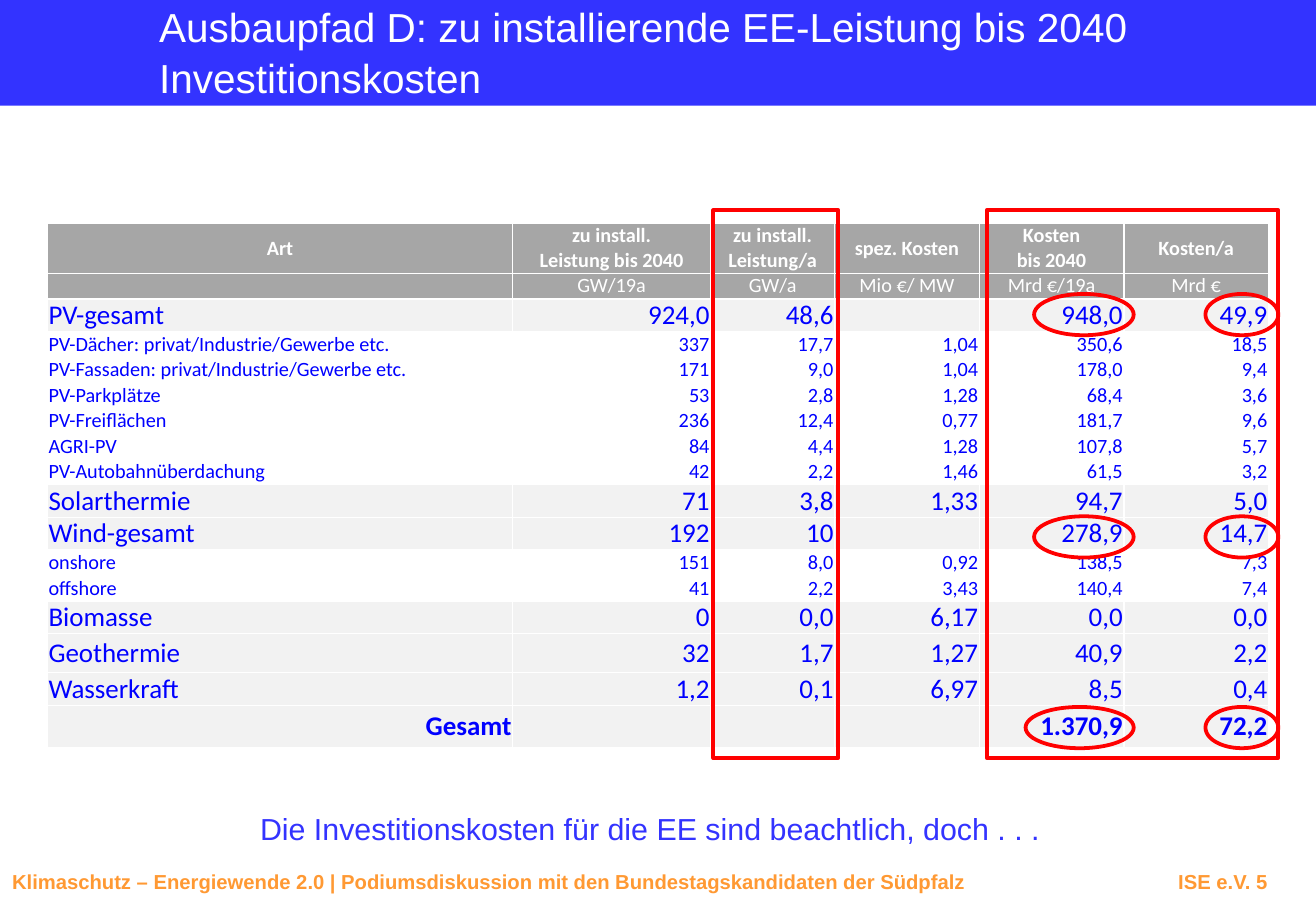
from dataclasses import dataclass

from lxml.etree import SubElement
from pptx import Presentation
from pptx.dml.color import RGBColor
from pptx.enum.shapes import MSO_SHAPE as Shape
from pptx.enum.text import MSO_ANCHOR as Anchor, PP_ALIGN as Align
from pptx.oxml.ns import qn
from pptx.util import Inches, Pt

COLORS = {
    "banner": "3333FF", "white": "FFFFFF", "footer": "FF9933", "header": "A6A6A6",
    "group": "F2F2F2", "figures": "0000FF", "mark": "FF0000",
}
WIDTH, HEIGHT = Inches(10.83), Inches(7.5)


def across(percent: float) -> int:
    """Length as a percentage of the slide width."""
    return round(WIDTH * percent / 100)


def down(percent: float) -> int:
    """Length as a percentage of the slide height."""
    return round(HEIGHT * percent / 100)


@dataclass(frozen=True)
class Box:
    left: float
    top: float
    width: float
    height: float

    def place(self) -> tuple:
        return across(self.left), down(self.top), across(self.width), down(self.height)


@dataclass(frozen=True)
class TextStyle:
    size: int
    color: str
    font: str = "Calibri"
    bold: bool = False


@dataclass(frozen=True)
class RowStyle:
    text: TextStyle
    fill: str
    label_align: Align = Align.LEFT
    value_align: Align = Align.RIGHT


@dataclass(frozen=True)
class Row:
    style: RowStyle
    height: float
    cells: tuple


HEADER = RowStyle(TextStyle(12, "white", bold=True), "header", Align.CENTER, Align.CENTER)
UNITS = RowStyle(TextStyle(12, "white"), "header", Align.CENTER, Align.CENTER)
GROUP = RowStyle(TextStyle(16, "figures"), "group")
DETAIL = RowStyle(TextStyle(12, "figures"), "white")
TOTAL = RowStyle(TextStyle(16, "figures", bold=True), "group", Align.RIGHT)

COLUMNS = (35.36, 15.05, 9.42, 10.99, 10.99, 10.99)
ROWS = (
    Row(HEADER, 5.47, ("Art", "zu install.\vLeistung bis 2040", "zu install.\vLeistung/a",
                       "spez. Kosten", "Kosten\vbis 2040", "Kosten/a")),
    Row(UNITS, 2.8, ("", "GW/19a", "GW/a", "Mio €/ MW", "Mrd €/19a", "Mrd €")),
    Row(GROUP, 3.6, ("PV-gesamt", "924,0", "48,6", "", "948,0", "49,9")),
    Row(DETAIL, 2.8, ("PV-Dächer: privat/Industrie/Gewerbe etc.",
                      "337", "17,7", "1,04", "350,6", "18,5")),
    Row(DETAIL, 2.8, ("PV-Fassaden: privat/Industrie/Gewerbe etc.",
                      "171", "9,0", "1,04", "178,0", "9,4")),
    Row(DETAIL, 2.8, ("PV-Parkplätze", "53", "2,8", "1,28", "68,4", "3,6")),
    Row(DETAIL, 2.8, ("PV-Freiflächen", "236", "12,4", "0,77", "181,7", "9,6")),
    Row(DETAIL, 2.8, ("AGRI-PV", "84", "4,4", "1,28", "107,8", "5,7")),
    Row(DETAIL, 2.8, ("PV-Autobahnüberdachung", "42", "2,2", "1,46", "61,5", "3,2")),
    Row(GROUP, 3.6, ("Solarthermie", "71", "3,8", "1,33", "94,7", "5,0")),
    Row(GROUP, 3.6, ("Wind-gesamt", "192", "10", "", "278,9", "14,7")),
    Row(DETAIL, 2.8, ("onshore", "151", "8,0", "0,92", "138,5", "7,3")),
    Row(DETAIL, 2.8, ("offshore", "41", "2,2", "3,43", "140,4", "7,4")),
    Row(GROUP, 3.6, ("Biomasse", "0", "0,0", "6,17", "0,0", "0,0")),
    Row(GROUP, 4.27, ("Geothermie", "32", "1,7", "1,27", "40,9", "2,2")),
    Row(GROUP, 3.6, ("Wasserkraft", "1,2", "0,1", "6,97", "8,5", "0,4")),
    Row(TOTAL, 4.67, ("Gesamt", "", "", "", "1.370,9", "72,2")),
)


def rgb(name: str) -> RGBColor:
    return RGBColor.from_string(COLORS[name])


def format_runs(paragraph, style: TextStyle) -> None:
    for run in paragraph.runs:
        run.font.name, run.font.size, run.font.bold = style.font, Pt(style.size), style.bold
        run.font.color.rgb = rgb(style.color)


def add_text(slide, box: Box, text: str, style: TextStyle, inset: float,
             align: Align = Align.LEFT, right_tab: float = 0, spacing: float = 1) -> None:
    frame = slide.shapes.add_textbox(*box.place()).text_frame
    frame.word_wrap = True
    frame.vertical_anchor = Anchor.MIDDLE
    frame.margin_left = frame.margin_right = across(inset)
    frame.margin_top = frame.margin_bottom = 0
    paragraph = frame.paragraphs[0]
    paragraph.text = text
    paragraph.alignment, paragraph.line_spacing = align, spacing
    if right_tab:
        tabs = SubElement(paragraph._p.get_or_add_pPr(), qn("a:tabLst"))
        SubElement(tabs, qn("a:tab"), pos=str(across(right_tab)), algn="r")
    format_runs(paragraph, style)


def add_borders(cell) -> None:
    properties = cell._tc.get_or_add_tcPr()
    for index, side in enumerate(("lnL", "lnR", "lnT", "lnB")):
        line = SubElement(properties, qn(f"a:{side}"), w=str(Pt(1)))
        SubElement(SubElement(line, qn("a:solidFill")), qn("a:srgbClr"), val=COLORS["white"])
        properties.insert(index, line)


def fill_cell(cell, text: str, style: RowStyle, align: Align) -> None:
    cell.fill.solid()
    cell.fill.fore_color.rgb = rgb(style.fill)
    add_borders(cell)
    cell.vertical_anchor = Anchor.MIDDLE
    cell.margin_left = cell.margin_right = Inches(0.01)
    cell.margin_top = cell.margin_bottom = 0
    paragraph = cell.text_frame.paragraphs[0]
    paragraph.text = text
    paragraph.alignment = align
    format_runs(paragraph, style.text)
    if not text:
        SubElement(paragraph._p, qn("a:endParaRPr"), sz=str(style.text.size * 100))


def add_cost_table(slide) -> None:
    box = Box(3.6, 24.53, sum(COLUMNS), sum(row.height for row in ROWS))
    table = slide.shapes.add_table(len(ROWS), len(COLUMNS), *box.place()).table
    table.first_row = table.horz_banding = False
    for column, width in zip(table.columns, COLUMNS):
        column.width = across(width)
    for row_index, row in enumerate(ROWS):
        table.rows[row_index].height = down(row.height)
        for column_index, text in enumerate(row.cells):
            align = row.style.value_align if column_index else row.style.label_align
            fill_cell(table.cell(row_index, column_index), text, row.style, align)


def add_mark(shapes, kind: Shape, box: Box) -> None:
    shape = shapes.add_shape(kind, *box.place())
    shape.shadow.inherit = False
    shape.fill.background()
    shape.line.color.rgb = rgb("mark")
    shape.line.width = Pt(2.25)


def main() -> None:
    presentation = Presentation()
    presentation.slide_width, presentation.slide_height = WIDTH, HEIGHT
    slide = presentation.slides.add_slide(presentation.slide_layouts[6])

    # Banner and title
    banner = slide.shapes.add_shape(Shape.RECTANGLE, *Box(0, 0, 100, 11.6).place())
    banner.shadow.inherit = False
    banner.fill.solid()
    banner.fill.fore_color.rgb = rgb("banner")
    banner.line.fill.background()
    add_text(slide, Box(12.1, 0.13, 87.9, 10.8),
             "Ausbaupfad D: zu installierende EE-Leistung bis 2040\vInvestitionskosten",
             TextStyle(24, "white", "Arial"), inset=0, spacing=1.05)

    # Cost table
    add_cost_table(slide)

    # Red frames around the yearly output and the costs, ovals around the key sums
    frame_top, frame_height = 23.07, 60.13
    add_mark(slide.shapes, Shape.RECTANGLE, Box(54.2, frame_top, 9.51, frame_height))
    costs = slide.shapes.add_group_shape().shapes
    add_mark(costs, Shape.RECTANGLE, Box(74.98, frame_top, 22.16, frame_height))
    for top, left, width in ((32.27, 78.58, 7.57), (56.67, 78.58, 7.57), (77.6, 77.93, 8.22)):
        add_mark(costs, Shape.OVAL, Box(left, top, width, 4.53))
        add_mark(costs, Shape.OVAL, Box(91.6, top, 5.54, 4.53))

    # Conclusion and footer
    add_text(slide, Box(0, 88, 98.8, 5.87),
             "Die Investitionskosten für die EE sind beachtlich, doch . . .",
             TextStyle(18, "banner", "Arial"), inset=0.65, align=Align.CENTER)
    add_text(slide, Box(0, 94.8, 100, 4),
             "Klimaschutz – Energiewende 2.0 | Podiumsdiskussion mit den "
             "Bundestagskandidaten der Südpfalz\tISE e.V. 5",
             TextStyle(12, "footer", "Arial", bold=True), inset=0.92, right_tab=95.4)

    presentation.save("out.pptx")


if __name__ == "__main__":
    main()
